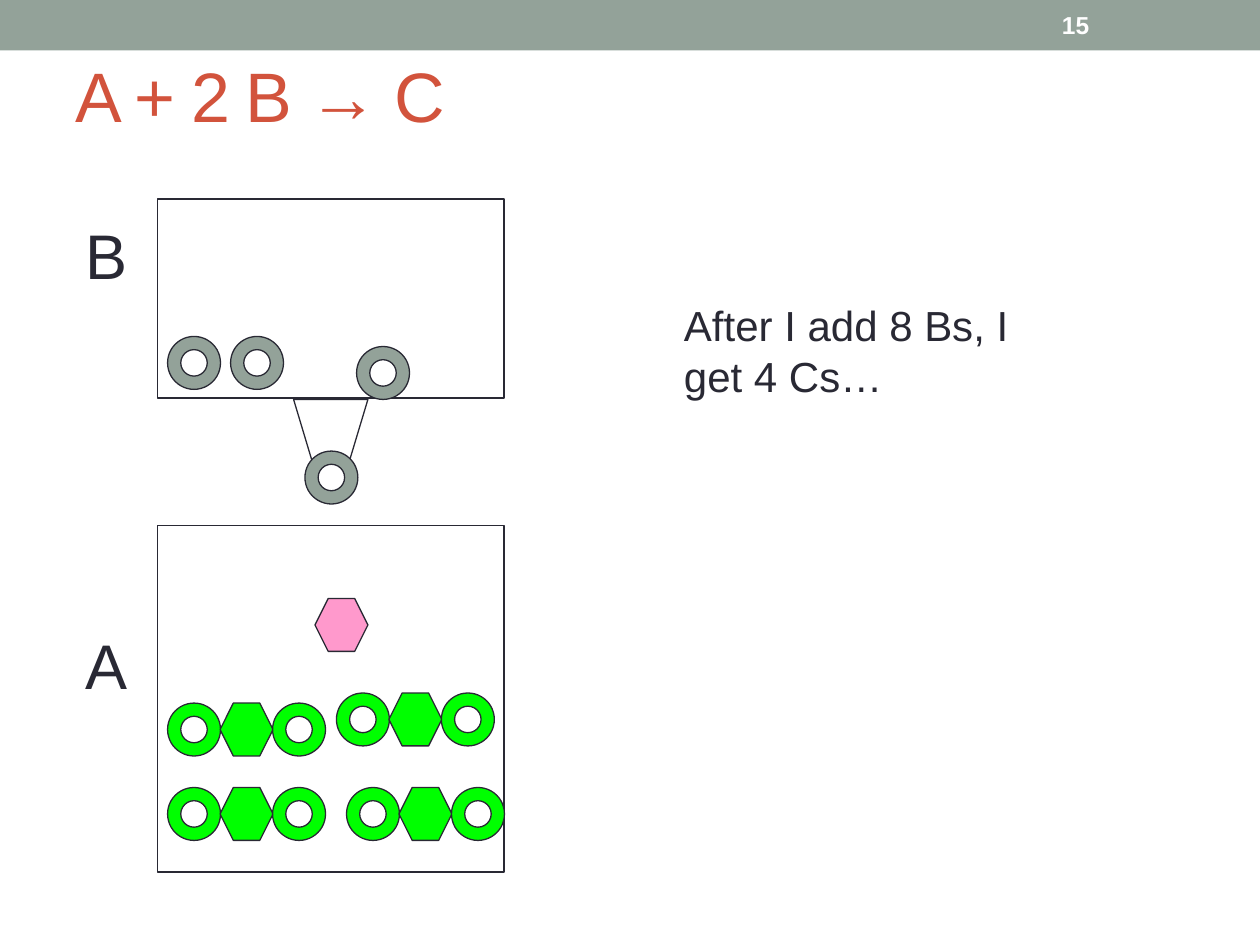
from lxml.etree import SubElement
from pptx import Presentation
from pptx.dml.color import RGBColor
from pptx.enum.shapes import MSO_SHAPE
from pptx.enum.text import MSO_ANCHOR, PP_ALIGN
from pptx.oxml.ns import qn
from pptx.util import Inches, Pt

# Content: positions and sizes in inches
TITLE = "A + 2 B → C"
PAGE_NUMBER = "15"
INK, SAGE, RUST = "292934", "93A299", "D2533C"
PINK, GREEN, WHITE = "FF99CC", "00FF00", "FFFFFF"
SIZE = 0.42    # width and height of every particle
PITCH = 1.25 / 3    # distance between touching particles

CONTAINERS = [(1.25, 1.58, 2.75, 1.58), (1.25, 4.17, 2.75, 2.75)]
FUNNEL = [(2.33, 3.17), (2.48, 3.67), (2.77, 3.67), (2.92, 3.17)]
B_RINGS = [(1.33, 2.67), (1.83, 2.67), (2.42, 3.58), (2.83, 2.75)]
A_HEXAGON = (2.5, 4.75)
C_MOLECULES = [(1.33, 6.25), (1.33, 5.58), (2.67, 5.5), (2.75, 6.25)]
LABELS = [
    ("B", (0.58, 1.67, 0.42, 0.7), 36),
    ("A", (0.58, 4.92, 0.42, 0.7), 36),
    ("After I add 8 Bs, I get 4 Cs…", (5.33, 2.33, 2.92, 0.9), 24),
]


def color(value):
    return RGBColor.from_string(value)


def paint(shape, fill=None, line=INK):
    shape.shadow.inherit = False
    if fill:
        shape.fill.solid()
        shape.fill.fore_color.rgb = color(fill)
    else:
        shape.fill.background()
    if line:
        shape.line.color.rgb = color(line)
        shape.line.width = Pt(0.75)
    else:
        shape.line.fill.background()


def add_shape(shapes, kind, place, fill=None, line=INK):
    shape = shapes.add_shape(kind, *map(Inches, place))
    paint(shape, fill, line)
    return shape


def add_ring(shapes, left, top, fill):
    ring = add_shape(shapes, MSO_SHAPE.DONUT, (left, top, SIZE, SIZE), fill)
    ring.adjustments[0] = 0.25


def add_hexagon(shapes, left, top, fill):
    hexagon = add_shape(shapes, MSO_SHAPE.HEXAGON, (left, top, SIZE, SIZE), fill)
    hexagon.adjustments[0] = 0.25


def write(box, text, size, ink, anchor=MSO_ANCHOR.TOP, bold=False):
    frame = box.text_frame
    frame.word_wrap = True
    frame.vertical_anchor = anchor
    para = frame.paragraphs[0]
    para.alignment = PP_ALIGN.LEFT
    span = para.add_run()
    span.text = text
    span.font.name = "Arial"
    span.font.size = Pt(size)
    span.font.bold = bold
    span.font.color.rgb = color(ink)
    return para, span


def add_label(shapes, text, place, size):
    box = shapes.add_textbox(*map(Inches, place))
    para, _ = write(box, text, size, INK)
    # Space before, as half a line
    spacing = SubElement(para._p.get_or_add_pPr(), qn("a:spcBef"))
    SubElement(spacing, qn("a:spcPct")).set("val", "50000")


def main():
    deck = Presentation()
    deck.slide_width, deck.slide_height = Inches(10), Inches(7.5)
    page = deck.slides.add_slide(deck.slide_layouts[5])
    shapes = page.shapes

    # Top bar, title and page number
    add_shape(shapes, MSO_SHAPE.RECTANGLE, (0, 0, 10, 0.4), SAGE, None)
    title = shapes.title
    title.left, title.top = Inches(0.5), Inches(0.25)
    title.width, title.height = Inches(8.77), Inches(1)
    _, span = write(title, TITLE, 40, RUST, MSO_ANCHOR.MIDDLE)
    span._r.get_or_add_rPr().set("spc", "-100")
    number = shapes.add_textbox(*map(Inches, (8.33, 0.02, 1.17, 0.36)))
    write(number, PAGE_NUMBER, 14, WHITE, MSO_ANCHOR.MIDDLE, bold=True)

    # Containers and the funnel between them
    for place in CONTAINERS:
        add_shape(shapes, MSO_SHAPE.RECTANGLE, place)
    corners = [(Inches(x), Inches(y)) for x, y in FUNNEL]
    outline = shapes.build_freeform(*corners[0])
    outline.add_line_segments(corners[1:], close=True)
    paint(outline.convert_to_shape())

    # Loose particles
    for left, top in B_RINGS:
        add_ring(shapes, left, top, SAGE)
    add_hexagon(shapes, *A_HEXAGON, PINK)

    # Each C is a ring, a hexagon and a ring side by side
    for left, top in C_MOLECULES:
        molecule = shapes.add_group_shape().shapes
        for index, add_part in enumerate((add_ring, add_hexagon, add_ring)):
            add_part(molecule, left + index * PITCH, top, GREEN)

    # Labels and remark
    for text, place, size in LABELS:
        add_label(shapes, text, place, size)

    deck.save("out.pptx")


if __name__ == "__main__":
    main()
